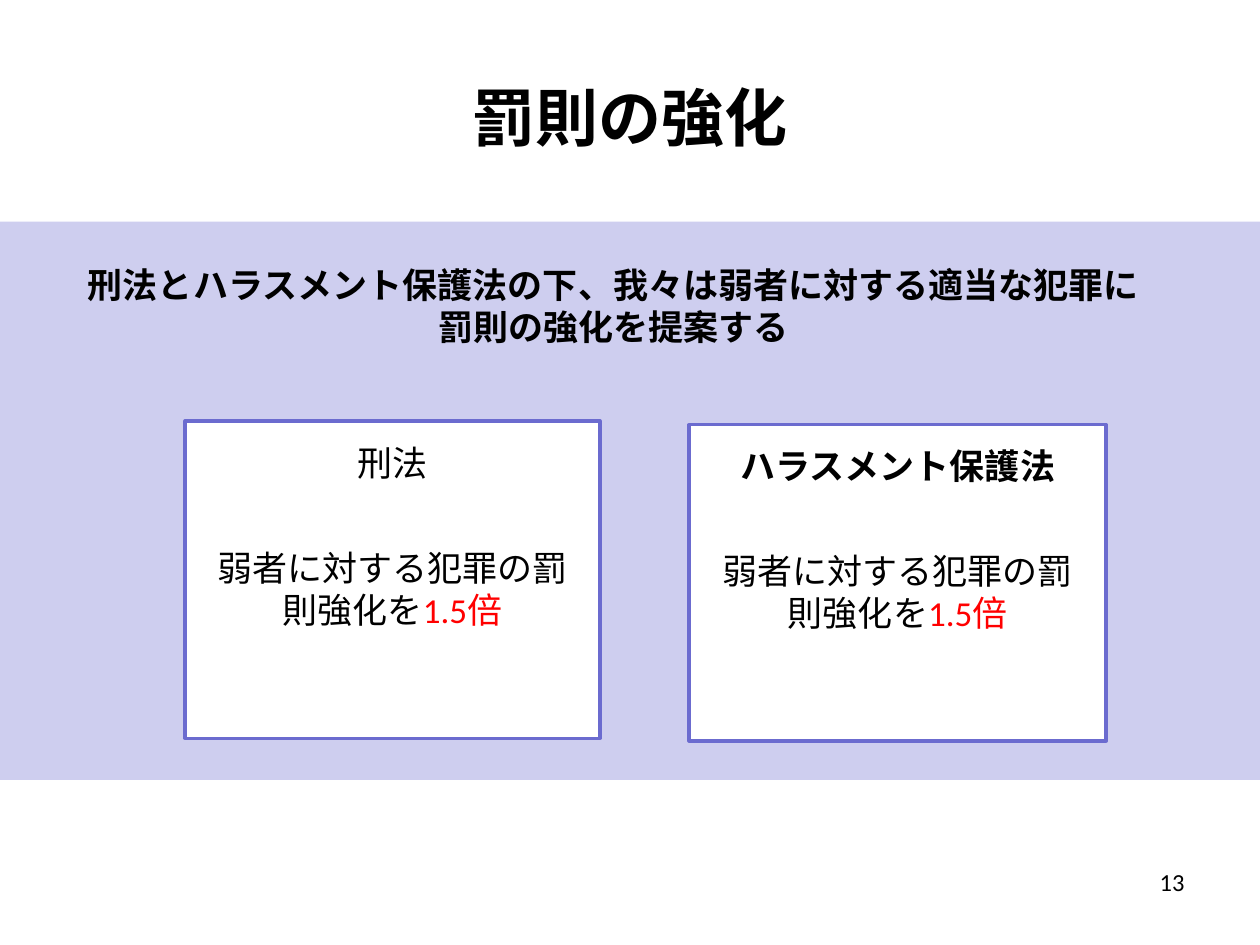
from pptx import Presentation
from pptx.dml.color import RGBColor
from pptx.enum import shapes, text
from pptx.util import Inches, Pt

COLORS = {
    "ink": "000000",
    "accent": "FF0000",
    "band": "CECEEF",
    "border": "6B6BCF",
    "paper": "FFFFFF",
}
ALIGN = text.PP_ALIGN


def color(name):
    return RGBColor.from_string(COLORS[name])


class Slide:
    """Holds the style and the current slide."""

    font = "Calibri"
    body_size = 20

    def __init__(self, page):
        self.page = page

    def style(self, span, size=body_size, bold=False, ink="ink"):
        span.font.name = self.font
        span.font.size = Pt(size)
        span.font.bold = bold
        span.font.color.rgb = color(ink)

    def fill_text(self, box, words, align=ALIGN.CENTER, **look):
        frame = box.text_frame
        frame.word_wrap = True
        frame.text = words
        para = frame.paragraphs[0]
        para.alignment = align
        self.style(para.runs[0], **look)

    def title(self, words, left, top, width, height):
        box = self.page.shapes.title
        box.left, box.top = Inches(left), Inches(top)
        box.width, box.height = Inches(width), Inches(height)
        box.text_frame.vertical_anchor = text.MSO_ANCHOR.MIDDLE
        self.fill_text(box, words, size=36, bold=True)

    def label(self, words, left, top, width, height, **look):
        box = self.page.shapes.add_textbox(
            Inches(left), Inches(top), Inches(width), Inches(height))
        self.fill_text(box, words, **look)

    def panel(self, left, top, width, height, fill, border=None):
        box = self.page.shapes.add_shape(
            shapes.MSO_SHAPE.RECTANGLE,
            Inches(left), Inches(top), Inches(width), Inches(height))
        box.shadow.inherit = False
        box.fill.solid()
        box.fill.fore_color.rgb = color(fill)
        if border:
            box.line.color.rgb = color(border)
            box.line.width = Pt(2)
        else:
            box.line.fill.background()
        return box

    def law_card(self, heading, bold, left, top, width, height):
        box = self.panel(left, top, width, height, "paper", "border")
        frame = box.text_frame
        frame.margin_left = frame.margin_right = Inches(0.16)
        frame.margin_top = frame.margin_bottom = Inches(0.16)
        frame.vertical_anchor = text.MSO_ANCHOR.TOP
        self.fill_text(box, heading, bold=bold)
        # Penalty, set one line below the heading
        para = frame.add_paragraph()
        para.alignment = ALIGN.CENTER
        para.space_before = Pt(36)
        for words, ink in (("弱者に対する犯罪の罰則強化を", "ink"),
                           ("1.5倍", "accent")):
            span = para.add_run()
            span.text = words
            self.style(span, ink=ink)


def main():
    deck = Presentation()
    deck.slide_width, deck.slide_height = Inches(10), Inches(7.5)
    slide = Slide(deck.slides.add_slide(deck.slide_layouts[5]))

    # Title and page number
    slide.title("罰則の強化", 0.5, 0.3, 9, 1.25)
    slide.label("13", 7.17, 6.83, 2.33, 0.52, align=ALIGN.RIGHT, size=14)

    # Coloured band with the two laws
    slide.panel(0, 1.76, 10, 4.43, "band")
    slide.law_card("刑法", False, 1.47, 3.34, 3.29, 2.52)
    slide.law_card("ハラスメント保護法", True, 5.47, 3.37, 3.31, 2.51)

    # Proposal above the cards
    slide.label("刑法とハラスメント保護法の下、我々は弱者に対する適当な犯罪に"
                "罰則の強化を提案する", 0.5, 2.04, 8.74, 0.77, bold=True)

    deck.save("out.pptx")


if __name__ == "__main__":
    main()
